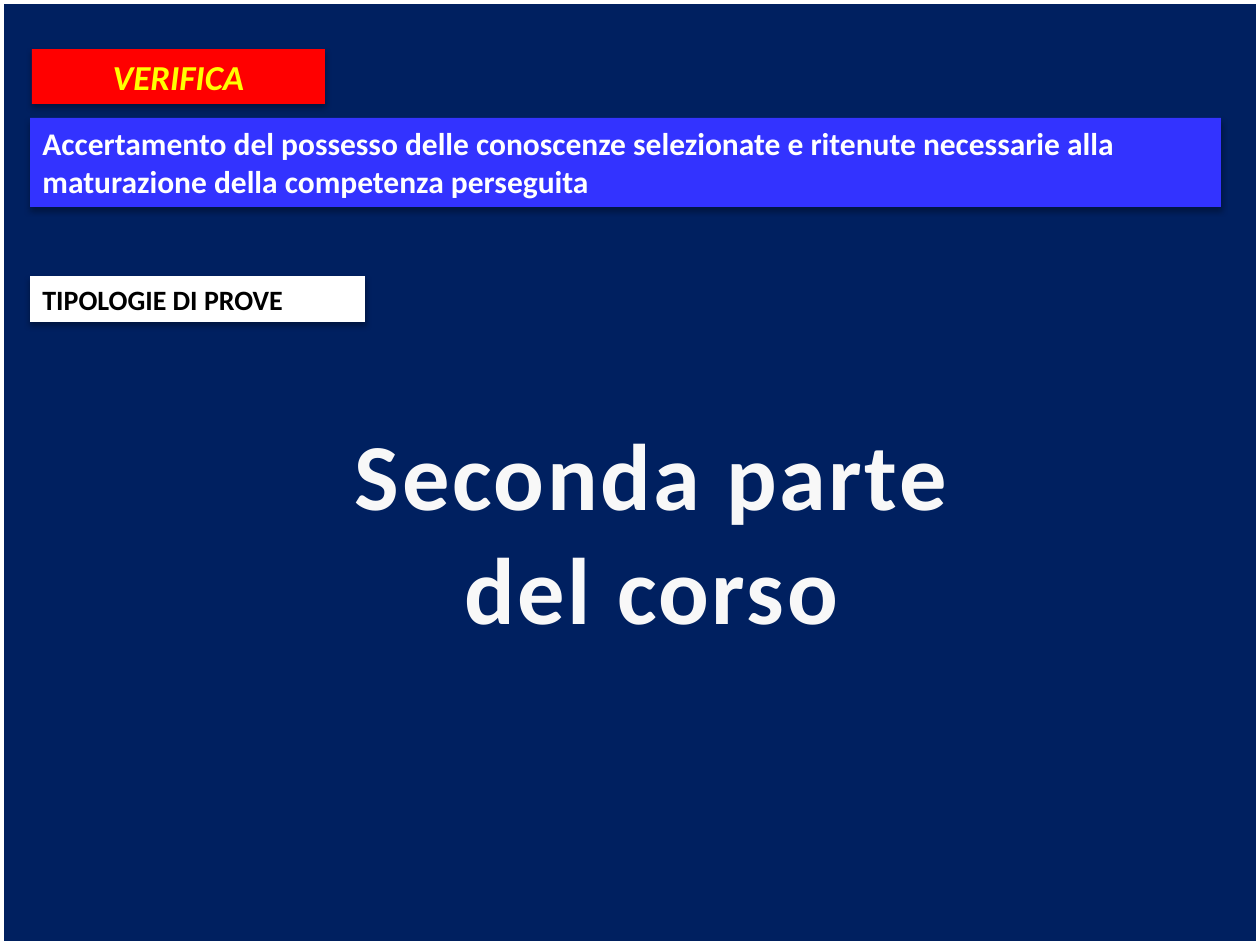
from dataclasses import dataclass

from lxml.etree import SubElement
from pptx import Presentation
from pptx.dml.color import RGBColor
from pptx.enum.shapes import MSO_SHAPE as Shape
from pptx.enum.text import MSO_ANCHOR as Anchor, MSO_AUTO_SIZE as AutoSize, PP_ALIGN as Align
from pptx.oxml.ns import qn
from pptx.slide import Slide
from pptx.text.text import TextFrame
from pptx.util import Emu, Pt

NAVY = RGBColor(0x00, 0x20, 0x60)
RED = RGBColor(0xFF, 0x00, 0x00)
BLUE = RGBColor(0x33, 0x33, 0xFF)
WHITE = RGBColor(0xFF, 0xFF, 0xFF)
OFF_WHITE = RGBColor(0xF8, 0xF8, 0xF8)
YELLOW = RGBColor(0xFF, 0xFF, 0x00)
BLACK = RGBColor(0x00, 0x00, 0x00)

PX_PER_INCH = 126
WIDTH, HEIGHT = 1260, 945


@dataclass(frozen=True)
class Box:
    left: int
    top: int
    width: int
    height: int

    def emu(self) -> list[Emu]:
        return [px(n) for n in (self.left, self.top, self.width, self.height)]


@dataclass(frozen=True)
class Style:
    size: int
    color: RGBColor
    align: Align = Align.LEFT
    italic: bool = False
    spacing: float = 0


@dataclass(frozen=True)
class Banner:
    text: str
    box: Box
    fill: RGBColor
    style: Style


BANNERS = [
    Banner("VERIFICA", Box(32, 49, 293, 55), RED, Style(20, YELLOW, Align.CENTER, italic=True)),
    Banner(
        "Accertamento del possesso delle conoscenze selezionate e ritenute necessarie alla "
        "maturazione della competenza perseguita",
        Box(30, 118, 1191, 89), BLUE, Style(18, WHITE),
    ),
    Banner("TIPOLOGIE DI PROVE", Box(30, 276, 335, 46), WHITE, Style(16, BLACK)),
]
TITLE_LINES = ["Seconda parte", "del corso"]
TITLE_BOX = Box(338, 410, 627, 242)
TITLE_STYLE = Style(54, OFF_WHITE, Align.CENTER, spacing=1.5)


def px(length: int) -> Emu:
    return Emu(round(length * 914400 / PX_PER_INCH))


def write(frame: TextFrame, lines: list[str], style: Style, wrap: bool) -> None:
    frame.word_wrap = wrap
    frame.auto_size = AutoSize.SHAPE_TO_FIT_TEXT
    frame.vertical_anchor = Anchor.TOP
    for index, line in enumerate(lines):
        paragraph = frame.add_paragraph() if index else frame.paragraphs[0]
        paragraph.alignment = style.align
        run = paragraph.add_run()
        run.text = line
        font = paragraph.font
        font.name, font.size = "Calibri", Pt(style.size)
        font.bold, font.italic = True, style.italic
        font.color.rgb = style.color
        if style.spacing:
            run._r.get_or_add_rPr().set("spc", str(round(style.spacing * 100)))


def add_frame(slide: Slide) -> None:
    border = slide.shapes.add_shape(Shape.RECTANGLE, *Box(0, 0, WIDTH, HEIGHT).emu())
    border.shadow.inherit = False
    border.fill.background()
    border.line.color.rgb = WHITE
    border.line.width = Pt(4.5)


def add_banner(slide: Slide, banner: Banner) -> None:
    panel = slide.shapes.add_shape(Shape.RECTANGLE, *banner.box.emu())
    panel.fill.solid()
    panel.fill.fore_color.rgb = banner.fill
    panel.line.fill.background()
    panel.shadow.inherit = False
    effects = panel._element.spPr.find(qn("a:effectLst"))
    shadow = SubElement(
        effects, qn("a:outerShdw"), blurRad=str(Pt(3.5)), dist=str(Pt(2.2)),
        dir=str(90 * 60000), rotWithShape="0",
    )
    tint = SubElement(shadow, qn("a:srgbClr"), val=str(BLACK))
    SubElement(tint, qn("a:alpha"), val="32000")
    write(panel.text_frame, [banner.text], banner.style, wrap=True)


def main() -> None:
    deck = Presentation()
    deck.slide_width, deck.slide_height = px(WIDTH), px(HEIGHT)
    slide = deck.slides.add_slide(deck.slide_layouts[6])
    slide.background.fill.solid()
    slide.background.fill.fore_color.rgb = NAVY
    add_frame(slide)
    for banner in BANNERS:
        add_banner(slide, banner)
    title = slide.shapes.add_textbox(*TITLE_BOX.emu())
    write(title.text_frame, TITLE_LINES, TITLE_STYLE, wrap=False)
    deck.save("out.pptx")


if __name__ == "__main__":
    main()
